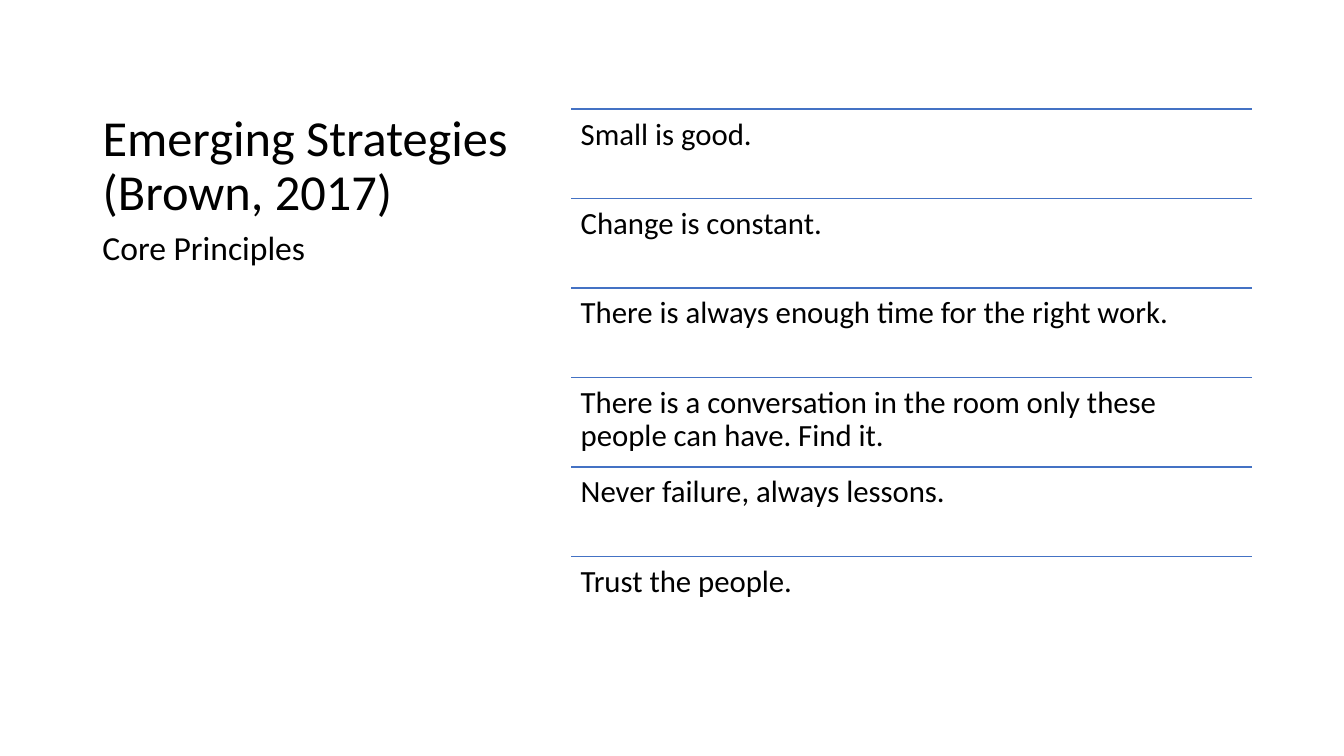
"""Build a slide listing the core principles of emerging strategies."""
import pptx
import pptx.dml.color
import pptx.enum.shapes
import pptx.enum.text
import pptx.oxml.ns
import pptx.util
from lxml import etree

Pt = pptx.util.Pt
COLOURS = {"text": "000000", "rule": "4472C4"}
PRINCIPLES = [
    "Small is good.",
    "Change is constant.",
    "There is always enough time for the right work.",
    "There is a conversation in the room only these people can have. Find it.",
    "Never failure, always lessons.",
    "Trust the people.",
]
HEADING_LEFT, HEADING_WIDTH = 66.1, 309.6
LIST_LEFT, LIST_TOP, LIST_WIDTH, ROW_HEIGHT = 408.2, 78, 486, 63.9


def colour(name):
    return pptx.dml.color.RGBColor.from_string(COLOURS[name])


def write_text(frame, text, size, anchor=pptx.enum.text.MSO_ANCHOR.TOP):
    frame.word_wrap = True
    frame.auto_size = pptx.enum.text.MSO_AUTO_SIZE.NONE
    frame.vertical_anchor = anchor
    paragraph = frame.paragraphs[0]
    paragraph.alignment = pptx.enum.text.PP_ALIGN.LEFT
    paragraph.line_spacing = 0.9
    run = paragraph.add_run()
    run.text = text
    run.font.name = "Calibri"
    run.font.size = Pt(size)
    run.font.color.rgb = colour("text")


def add_title(slide, text):
    title = slide.shapes.title
    title.left, title.top = Pt(HEADING_LEFT), Pt(36)
    title.width, title.height = Pt(HEADING_WIDTH), Pt(126)
    write_text(title.text_frame, text, 36, pptx.enum.text.MSO_ANCHOR.BOTTOM)


def add_text(shapes, text, left, top, width, height, size):
    box = shapes.add_textbox(Pt(left), Pt(top), Pt(width), Pt(height))
    write_text(box.text_frame, text, size)
    return box.text_frame


def add_rule(shapes, left, top, width):
    rule = shapes.add_connector(
        pptx.enum.shapes.MSO_CONNECTOR.STRAIGHT,
        Pt(left), Pt(top), Pt(left + width), Pt(top))
    rule.line.color.rgb = colour("rule")
    rule.line.width = Pt(1)
    properties = rule._element.spPr
    etree.SubElement(properties, pptx.oxml.ns.qn("a:effectLst"))


def add_principle(shapes, text, top):
    add_rule(shapes, LIST_LEFT, top, LIST_WIDTH)
    frame = add_text(shapes, text, LIST_LEFT, top, LIST_WIDTH, ROW_HEIGHT, 22)
    frame.margin_left = frame.margin_right = Pt(6.6)
    frame.margin_top = frame.margin_bottom = Pt(6.6)


def main():
    presentation = pptx.Presentation()
    presentation.slide_width, presentation.slide_height = Pt(960), Pt(540)
    slide = presentation.slides.add_slide(presentation.slide_layouts[5])
    add_title(slide, "Emerging Strategies (Brown, 2017)")
    principles = slide.shapes.add_group_shape().shapes
    for row, principle in enumerate(PRINCIPLES):
        add_principle(principles, principle, LIST_TOP + row * ROW_HEIGHT)
    add_text(slide.shapes, "Core Principles",
             HEADING_LEFT, 162, HEADING_WIDTH, 300, 24)
    presentation.save("out.pptx")


if __name__ == "__main__":
    main()
